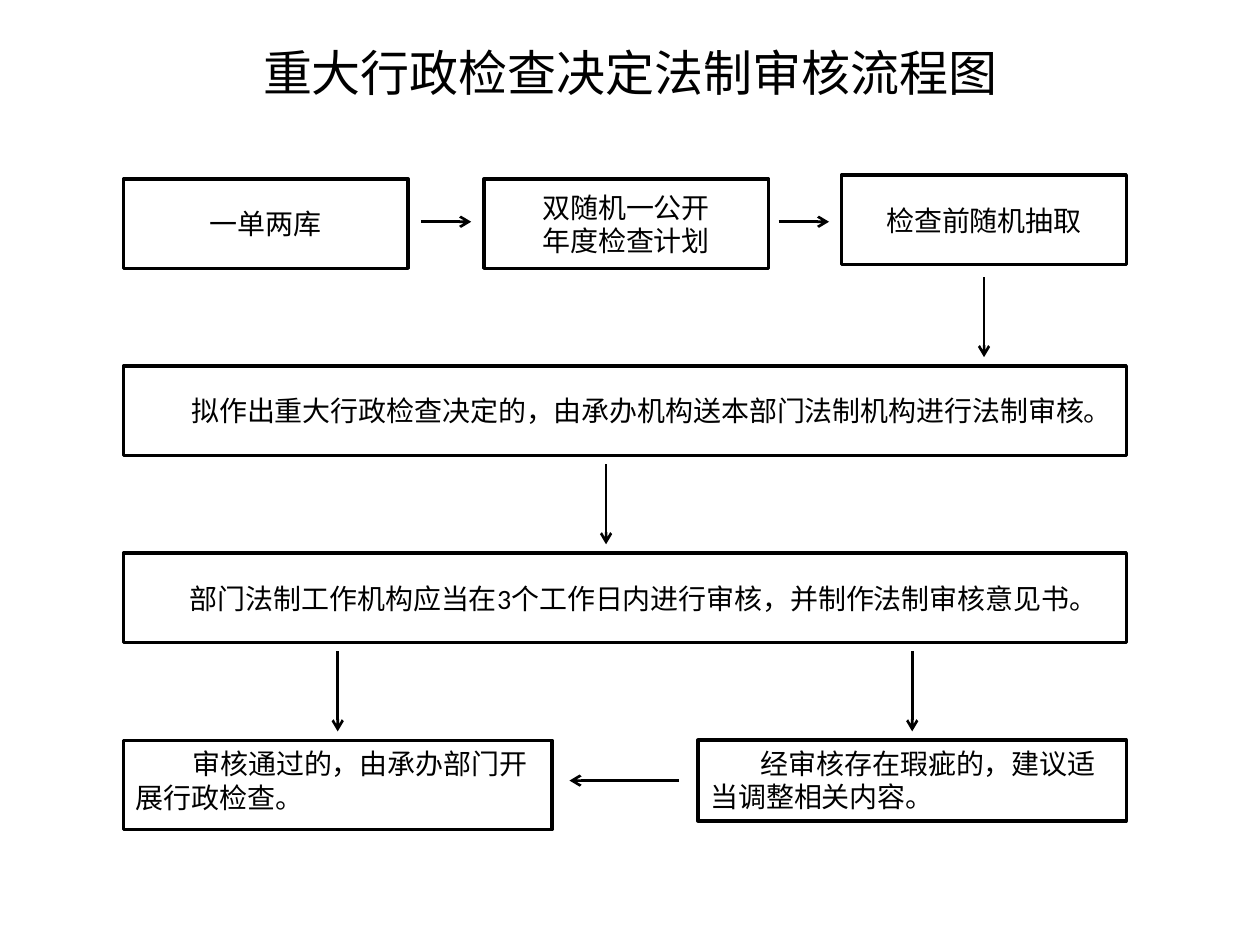
import pptx
import pptx.util
from lxml import etree
from pptx.dml.color import RGBColor
from pptx.enum.shapes import MSO_CONNECTOR, MSO_SHAPE
from pptx.enum.text import MSO_ANCHOR, PP_ALIGN
from pptx.oxml.ns import qn

BLACK = RGBColor(0, 0, 0)
WHITE = RGBColor(255, 255, 255)
CJK_FONT = "Noto Sans CJK SC"

# Flowchart frame, in inches
LEFT, WIDTH, BOX_H = 0.98, 7.96, 0.71
TOP, PITCH = 1.42, 1.485
ROWS = [TOP + i * PITCH for i in range(4)]
STEP_W, BRANCH_W = 2.26, 3.4
GAP = 0.07


def inches(*lengths):
    return [pptx.util.Inches(n) for n in lengths]


def style(p, size, font, align):
    p.alignment = align
    p.font.size = pptx.util.Pt(size)
    p.font.name = font
    p.font.color.rgb = BLACK


def add_title(s, text, x, y, w, h):
    title = s.shapes.title
    title.left, title.top, title.width, title.height = inches(x, y, w, h)
    tf = title.text_frame
    tf.text = text
    tf.vertical_anchor = MSO_ANCHOR.TOP
    style(tf.paragraphs[0], 28, CJK_FONT, PP_ALIGN.CENTER)


def add_box(s, lines, x, y, w, h=BOX_H, indent=0, anchor=MSO_ANCHOR.MIDDLE):
    """Outlined step; an indent makes its text a left-aligned sentence."""
    sp = s.shapes.add_shape(MSO_SHAPE.RECTANGLE, *inches(x, y, w, h))
    sp.shadow.inherit = False
    sp.fill.solid()
    sp.fill.fore_color.rgb = WHITE
    sp.line.color.rgb = BLACK
    sp.line.width = pptx.util.Pt(2)
    tf = sp.text_frame
    tf.word_wrap = True
    tf.vertical_anchor = anchor
    tf.text = "\n".join(lines)
    for p in tf.paragraphs:
        style(p, 16, "Calibri", PP_ALIGN.LEFT if indent else PP_ALIGN.CENTER)
        if indent:
            p._p.get_or_add_pPr().set("indent", str(pptx.util.Inches(indent)))


def add_arrow(s, x1, y1, x2, y2):
    c = s.shapes.add_connector(MSO_CONNECTOR.STRAIGHT, *inches(x1, y1, x2, y2))
    c.line.color.rgb = BLACK
    c.line.width = pptx.util.Pt(1.5)
    etree.SubElement(c.line._get_or_add_ln(), qn("a:tailEnd"), type="arrow")
    etree.SubElement(c._element.spPr, qn("a:effectLst"))


def add_down_arrow(s, x, row):
    """Arrow that fills the space below a row."""
    add_arrow(s, x, ROWS[row] + BOX_H + GAP, x, ROWS[row + 1] - GAP)


def add_preparation(s, x, y, w):
    """Three steps in a row; the last sits slightly higher."""
    last = x + w - STEP_W
    add_box(s, ["一单两库"], x, y, STEP_W)
    add_box(s, ["双随机一公开", "年度检查计划"], x + 2.86, y, STEP_W)
    add_box(s, ["检查前随机抽取"], last, y - 0.03, STEP_W)
    for start in (x + 2.36, x + 5.2):
        add_arrow(s, start, y + 0.34, start + 0.4, y + 0.34)
    add_down_arrow(s, last + STEP_W / 2, 0)


def add_review(s, x, w):
    """Two full-width steps."""
    add_box(s, ["拟作出重大行政检查决定的，由承办机构送本部门法制机构进行法制审核。"],
            x, ROWS[1], w, indent=0.44)
    add_box(s, ["部门法制工作机构应当在3个工作日内进行审核，并制作法制审核意见书。"],
            x, ROWS[2], w, indent=0.43)
    add_down_arrow(s, x + 3.83, 1)


def add_outcomes(s, x, y, w):
    """Two outcomes, the revised one feeding back into the approved one."""
    right = x + w - BRANCH_W
    add_box(s, ["审核通过的，由承办部门开展行政检查。"],
            x, y, BRANCH_W, indent=0.45, anchor=MSO_ANCHOR.TOP)
    add_box(s, ["经审核存在瑕疵的，建议适当调整相关内容。"],
            right, y, BRANCH_W, 0.64, indent=0.4, anchor=MSO_ANCHOR.TOP)
    for center in (x + BRANCH_W / 2, right + BRANCH_W / 2):
        add_down_arrow(s, center, 2)
    add_arrow(s, right - 0.15, y + 0.32, x + BRANCH_W + 0.14, y + 0.32)


def main():
    prs = pptx.Presentation()
    prs.slide_width, prs.slide_height = inches(10, 7.5)
    s = prs.slides.add_slide(prs.slide_layouts[5])
    add_title(s, "重大行政检查决定法制审核流程图", 0, 0.29, 10, 0.57)
    add_preparation(s, LEFT, ROWS[0], WIDTH)
    add_review(s, LEFT, WIDTH)
    add_outcomes(s, LEFT, ROWS[3], WIDTH)
    prs.save("out.pptx")


if __name__ == "__main__":
    main()
